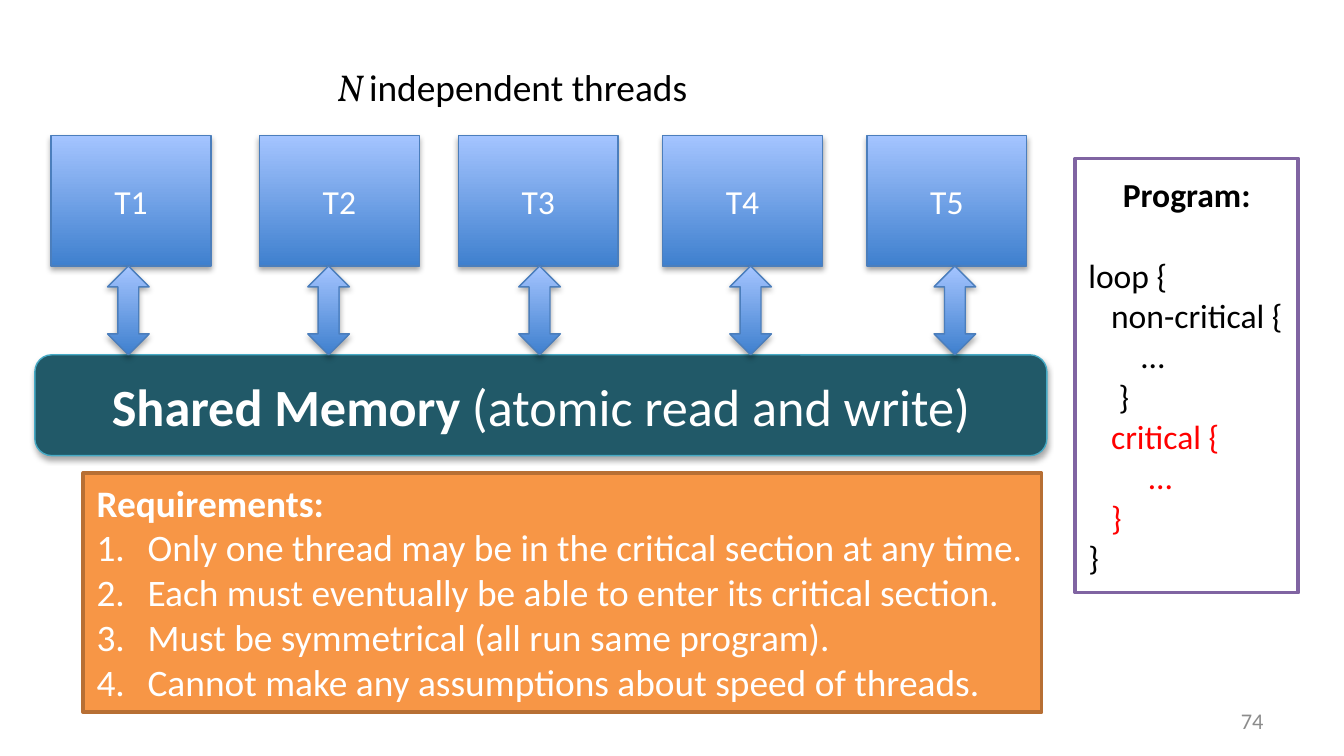
from dataclasses import dataclass
from typing import Optional

from lxml.etree import SubElement
from pptx import Presentation
from pptx.dml.color import RGBColor
from pptx.enum.shapes import MSO_SHAPE
from pptx.enum.text import MSO_ANCHOR, PP_ALIGN
from pptx.oxml.ns import qn
from pptx.util import Emu, Pt

PX = 9144  # EMU per px, 100 px to the inch


@dataclass(frozen=True)
class Theme:
    font: str = "Calibri"
    math_font: str = "Vollkorn"
    white: str = "FFFFFF"
    black: str = "000000"
    red: str = "FF0000"
    grey: str = "8C8C8C"
    blue_dark: str = "3F80CE"
    blue_light: str = "A4C4FF"
    blue_line: str = "4B7EBC"
    teal: str = "215968"
    teal_line: str = "46AAC5"
    purple: str = "8064A2"
    orange: str = "F79646"
    orange_line: str = "B76F34"
    note_size: int = 12
    body_size: int = 18
    list_size: int = 20
    banner_size: int = 28


THEME = Theme()


@dataclass(frozen=True)
class Box:
    left: int
    top: int
    width: int
    height: int

    def emu(self) -> list[Emu]:
        return [Emu(n * PX) for n in (self.left, self.top, self.width, self.height)]


@dataclass(frozen=True)
class Span:
    text: str
    size: int = THEME.body_size
    color: str = THEME.white
    bold: bool = False
    italic: bool = False
    font: str = THEME.font


@dataclass(frozen=True)
class Thread:
    name: str
    left: int
    arrow_left: int


THREADS = [
    Thread("T1", 38, 80),
    Thread("T2", 193, 229),
    Thread("T3", 341, 386),
    Thread("T4", 493, 543),
    Thread("T5", 645, 695),
]
PROGRAM = [
    ("loop {", THEME.black),
    ("   non-critical {", THEME.black),
    ("       …", THEME.black),
    ("    }", THEME.black),
    ("   critical {", THEME.red),
    ("        …", THEME.red),
    ("   }", THEME.red),
    ("}", THEME.black),
]
REQUIREMENTS = [
    "Only one thread may be in the critical section at any time.",
    "Each must eventually be able to enter its critical section.",
    "Must be symmetrical (all run same program).",
    "Cannot make any assumptions about speed of threads.",
]


def rgb(color: str) -> RGBColor:
    return RGBColor.from_string(color)


def write(para, spans: list[Span], align=PP_ALIGN.LEFT) -> None:
    para.alignment = align
    for span in spans:
        run = para.add_run()
        run.text = span.text
        font = run.font
        font.name, font.size = span.font, Pt(span.size)
        font.bold, font.italic = span.bold, span.italic
        font.color.rgb = rgb(span.color)


def add_shadow(shape) -> None:
    effects = shape.element.spPr.find(qn("a:effectLst"))
    shadow = SubElement(effects, qn("a:outerShdw"), blurRad="40000", dist="23000",
                        dir="5400000", rotWithShape="0")
    color = SubElement(shadow, qn("a:srgbClr"), val=THEME.black)
    SubElement(color, qn("a:alpha"), val="35000")


def add_panel(page, kind, box: Box, line: str, weight: float,
              fill: Optional[str] = None, shadow: bool = False):
    """Draw a preset shape; without a fill colour it gets the blue gradient."""
    shape = page.shapes.add_shape(kind, *box.emu())
    shape.shadow.inherit = False
    if fill:
        shape.fill.solid()
        shape.fill.fore_color.rgb = rgb(fill)
    else:
        shape.fill.gradient()
        shape.fill.gradient_angle = 90
        for stop, color in zip(shape.fill.gradient_stops, (THEME.blue_dark, THEME.blue_light)):
            stop.color.rgb = rgb(color)
    shape.line.color.rgb = rgb(line)
    shape.line.width = Pt(weight)
    if shadow:
        add_shadow(shape)
    return shape


def add_label(page, box: Box, spans: list[Span], align, wrap: bool, anchor) -> None:
    frame = page.shapes.add_textbox(*box.emu()).text_frame
    frame.word_wrap, frame.vertical_anchor = wrap, anchor
    write(frame.paragraphs[0], spans, align)


def add_thread(page, thread: Thread) -> None:
    square = add_panel(page, MSO_SHAPE.RECTANGLE, Box(thread.left, 101, 119, 97),
                       THEME.blue_line, 0.75, shadow=True)
    write(square.text_frame.paragraphs[0], [Span(thread.name)], PP_ALIGN.CENTER)
    add_panel(page, MSO_SHAPE.UP_DOWN_ARROW, Box(thread.arrow_left, 198, 31, 66),
              THEME.blue_line, 0.75, shadow=True)


def add_number(para) -> None:
    properties = para._p.get_or_add_pPr()
    properties.set("marL", str(38 * PX))
    properties.set("indent", str(-38 * PX))
    SubElement(properties, qn("a:buFont"), typeface="+mj-lt")
    SubElement(properties, qn("a:buAutoNum"), type="arabicPeriod")


def main() -> None:
    # Widescreen page, 16 to 9
    deck = Presentation()
    deck.slide_width = Emu(1000 * PX)
    deck.slide_height = Emu(1000 * PX * 9 // 16)
    page = deck.slides.add_slide(deck.slide_layouts[6])

    # Page number and heading
    add_label(page, Box(717, 521, 233, 30), [Span("74", THEME.note_size, THEME.grey)],
              PP_ALIGN.RIGHT, True, MSO_ANCHOR.MIDDLE)
    add_label(page, Box(241, 43, 290, 44), [
        Span("N ", THEME.list_size, THEME.black, italic=True, font=THEME.math_font),
        Span("independent threads", THEME.list_size, THEME.black),
    ], PP_ALIGN.LEFT, False, MSO_ANCHOR.TOP)

    # Shared memory, then the threads that reach it
    memory = add_panel(page, MSO_SHAPE.ROUNDED_RECTANGLE, Box(26, 264, 753, 75),
                       THEME.teal_line, 0.75, THEME.teal, shadow=True)
    write(memory.text_frame.paragraphs[0], [
        Span("Shared Memory ", THEME.banner_size, bold=True),
        Span("(atomic read and write)", THEME.banner_size),
    ], PP_ALIGN.CENTER)
    for thread in THREADS:
        add_thread(page, thread)

    # Program listing
    program = add_panel(page, MSO_SHAPE.RECTANGLE, Box(800, 118, 166, 323),
                        THEME.purple, 2, THEME.white).text_frame
    title = program.paragraphs[0]
    write(title, [Span("Program:", color=THEME.black, bold=True)], PP_ALIGN.CENTER)
    title.space_after = Pt(21.6)
    for text, color in PROGRAM:
        write(program.add_paragraph(), [Span(text, color=color)])

    # Requirements
    rules = add_panel(page, MSO_SHAPE.RECTANGLE, Box(62, 352, 713, 178),
                      THEME.orange_line, 2, THEME.orange).text_frame
    rules.word_wrap, rules.vertical_anchor = False, MSO_ANCHOR.TOP
    write(rules.paragraphs[0], [Span("Requirements:", THEME.list_size, bold=True)])
    for text in REQUIREMENTS:
        para = rules.add_paragraph()
        add_number(para)
        write(para, [Span(text, THEME.list_size)])

    deck.save("out.pptx")


if __name__ == "__main__":
    main()
